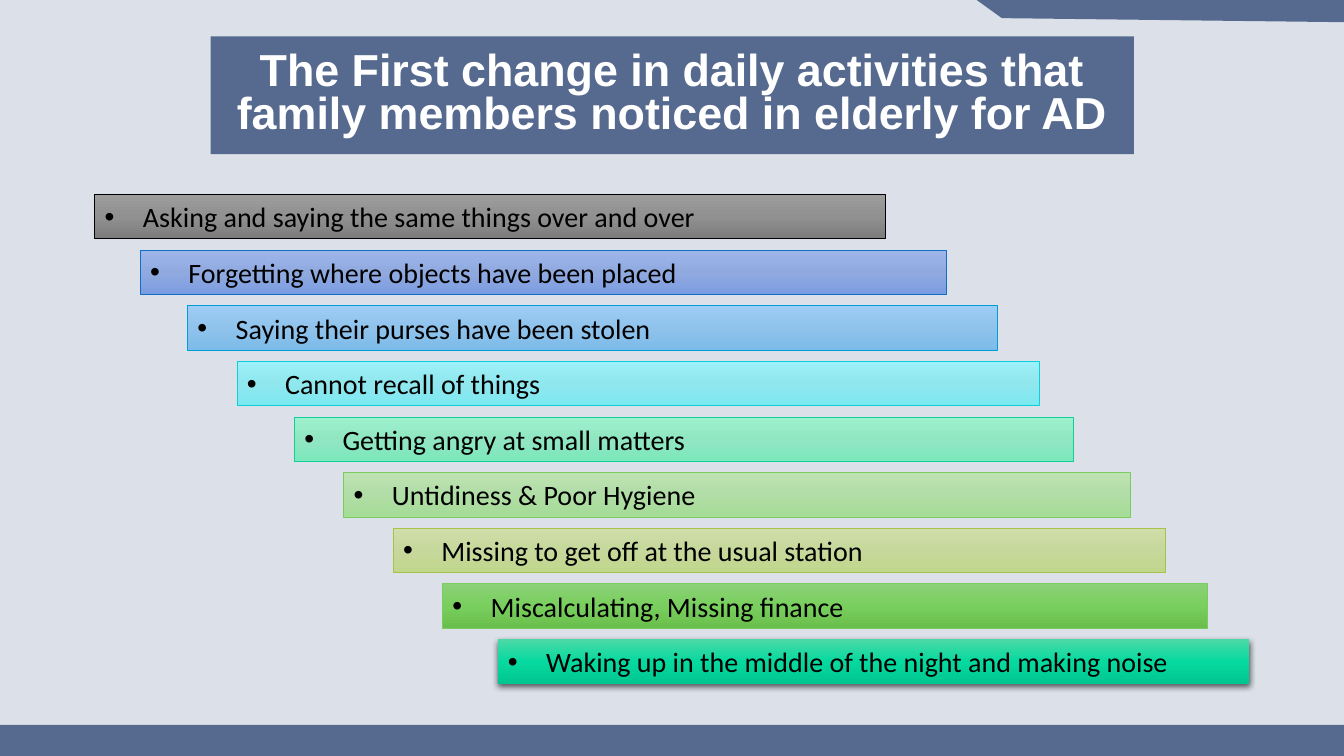
from copy import deepcopy
from dataclasses import dataclass

from lxml.etree import SubElement
from pptx import Presentation
from pptx.dml.color import RGBColor as RGB
from pptx.enum.shapes import MSO_SHAPE as Preset
from pptx.enum.text import MSO_ANCHOR as Anchor, MSO_AUTO_SIZE as AutoSize, PP_ALIGN as Align
from pptx.oxml.ns import qn
from pptx.util import Inches, Pt


@dataclass(frozen=True)
class Theme:
    backdrop: str = "DBE0E9"
    accent: str = "566A8F"
    title_ink: str = "FFFFFF"
    ink: str = "000000"
    title_font: str = "Arial"
    body_font: str = "Calibri"
    title_size: int = 32
    body_size: int = 20
    bar_line: float = 0.5


class SlideBuilder:
    COLUMNS, ROWS = 160, 90

    def __init__(self, deck, theme):
        self.theme = theme
        self.cell_width = deck.slide_width / self.COLUMNS
        self.cell_height = deck.slide_height / self.ROWS
        self.slide = deck.slides.add_slide(deck.slide_layouts.get_by_name("Title Only"))
        self.paint(self.slide.background.fill, theme.backdrop)

    def point(self, column, row):
        return round(column * self.cell_width), round(row * self.cell_height)

    def box(self, column, row, columns, rows):
        return *self.point(column, row), *self.point(columns, rows)

    def paint(self, fill, color):
        fill.solid()
        fill.fore_color.rgb = RGB.from_string(color)

    def type_in(self, paragraph, name, size, color, bold=False):
        font = paragraph.font
        font.name, font.size, font.bold = name, Pt(size), bold
        font.color.rgb = RGB.from_string(color)

    def flat(self, shape):
        self.paint(shape.fill, self.theme.accent)
        shape.line.fill.background()
        shape.shadow.inherit = False

    def band(self, *cells):
        self.flat(self.slide.shapes.add_shape(Preset.RECTANGLE, *self.box(*cells)))

    def corner(self, start, *others):
        outline = self.slide.shapes.build_freeform(*self.point(*start))
        outline.add_line_segments([self.point(*other) for other in others])
        self.flat(outline.convert_to_shape())

    def title(self, text, cells, rounding):
        heading = self.slide.shapes.title
        heading.left, heading.top, heading.width, heading.height = self.box(*cells)
        geometry = SubElement(heading._element.spPr, qn("a:prstGeom"), prst="roundRect")
        guides = SubElement(geometry, qn("a:avLst"))
        SubElement(guides, qn("a:gd"), name="adj", fmla=f"val {round(rounding * 100000)}")
        self.paint(heading.fill, self.theme.accent)
        frame = heading.text_frame
        frame.text = text
        frame.word_wrap = True
        frame.auto_size = AutoSize.NONE
        frame.vertical_anchor = Anchor.MIDDLE
        paragraph = frame.paragraphs[0]
        paragraph.alignment = Align.CENTER
        paragraph.line_spacing = 0.8
        self.type_in(paragraph, self.theme.title_font, self.theme.title_size,
                     self.theme.title_ink, bold=True)

    def shade(self, shape, colors):
        shape.fill.gradient()
        shape.fill.gradient_angle = 270
        stop_list = shape._element.spPr.find(qn("a:gradFill")).find(qn("a:gsLst"))
        stop_list.insert(1, deepcopy(stop_list[0]))
        for place, (stop, color) in enumerate(zip(shape.fill.gradient_stops, colors)):
            stop.position = place / 2
            stop.color.rgb = RGB.from_string(color)

    def cast_shadow(self, shape):
        effects = shape._element.spPr.find(qn("a:effectLst"))
        shadow = SubElement(effects, qn("a:outerShdw"), blurRad=str(Pt(4.5)),
                            dist=str(Pt(1.5)), dir="5400000", rotWithShape="0")
        color = SubElement(shadow, qn("a:srgbClr"), val=self.theme.ink)
        SubElement(color, qn("a:alpha"), val="63000")

    def bar(self, text, cells, colors, edge):
        bar = self.slide.shapes.add_shape(Preset.RECTANGLE, *self.box(*cells))
        self.shade(bar, colors)
        bar.shadow.inherit = False
        if edge:
            self.paint(bar.line.fill, edge)
            bar.line.width = Pt(self.theme.bar_line)
        else:
            bar.line.fill.background()
            self.cast_shadow(bar)
        frame = bar.text_frame
        frame.text = text
        frame.word_wrap = True
        frame.auto_size = AutoSize.SHAPE_TO_FIT_TEXT
        frame.vertical_anchor = Anchor.MIDDLE
        paragraph = frame.paragraphs[0]
        paragraph.alignment = Align.LEFT
        self.bullet(paragraph, Inches(0.38))
        self.type_in(paragraph, self.theme.body_font, self.theme.body_size, self.theme.ink)

    def bullet(self, paragraph, indent):
        properties = paragraph._p.get_or_add_pPr()
        properties.set("marL", str(indent))
        properties.set("indent", str(-indent))
        SubElement(properties, qn("a:buFont"), typeface="Arial")
        SubElement(properties, qn("a:buChar"), char="•")


CHANGES = [
    ("Asking and saying the same things over and over",
     11.28, 94.08, ("9D9D9D", "909090", "7C7C7C"), "000000"),
    ("Forgetting where objects have been placed",
     16.68, 96, ("9EB5EA", "90AAE0", "7C9CE1"), "0F6FC6"),
    ("Saying their purses have been stolen",
     22.32, 96.36, ("9DCDF4", "90C3EC", "7CBBE9"), "009DD9"),
    ("Cannot recall of things",
     28.2, 95.52, ("9DF1F8", "90E7EE", "7CE9F1"), "0BD0D9"),
    ("Getting angry at small matters",
     35.04, 92.76, ("9EF1CD", "91E6C2", "7CE8BC"), "10CF9B"),
    ("Untidiness & Poor Hygiene",
     40.92, 93.6, ("BDE3B3", "B1DDA6", "A5DC96"), "7CCA62"),
    ("Missing to get off at the usual station",
     46.8, 91.92, ("CFDEAA", "C6D89C", "C0D68A"), "A5C249"),
    ("Miscalculating, Missing finance",
     52.68, 91.08, ("8BD077", "79CF5D", "69BE4C"), "7CCA62"),
    ("Waking up in the middle of the night and making noise",
     59.28, 89.4, ("4CD9A7", "06D99F", "00C690"), None),
]
FIRST_ROW, ROW_STEP, BAR_ROWS = 23.16, 6.62, 5.28


def main():
    deck = Presentation()
    deck.slide_width, deck.slide_height = Inches(13.33), Inches(7.5)
    builder = SlideBuilder(deck, Theme())
    builder.band(0, 86.28, 160, 3.72)
    builder.corner((116.28, 0), (160, 0), (160, 2.64), (119.28, 2.16))
    builder.title("The First change in daily activities that family members noticed in elderly for AD",
                  (25.08, 4.32, 109.92, 14.04), rounding=0.3)
    for step, (change, column, columns, colors, edge) in enumerate(CHANGES):
        row = FIRST_ROW + step * ROW_STEP
        builder.bar(change, (column, row, columns, BAR_ROWS), colors, edge)
    deck.save("out.pptx")


if __name__ == "__main__":
    main()
